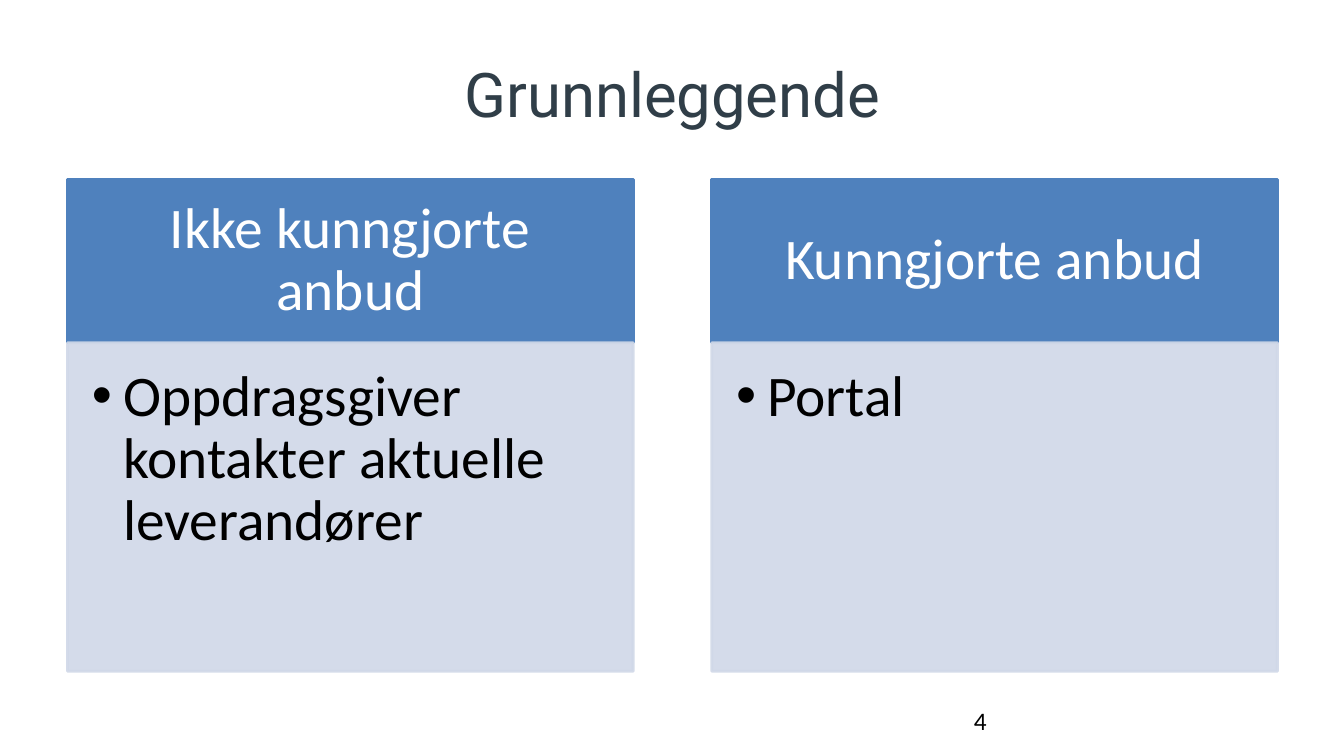
from dataclasses import dataclass

from lxml.etree import SubElement
from pptx import Presentation
from pptx.dml.color import RGBColor
from pptx.enum.shapes import MSO_SHAPE
from pptx.enum.text import MSO_ANCHOR, PP_ALIGN
from pptx.oxml.ns import qn
from pptx.util import Inches, Pt


@dataclass(frozen=True)
class Theme:
    title_color: RGBColor = RGBColor(0x30, 0x3E, 0x48)
    header: RGBColor = RGBColor(0x4F, 0x81, 0xBD)
    body: RGBColor = RGBColor(0xD0, 0xD8, 0xE8)
    white: RGBColor = RGBColor(0xFF, 0xFF, 0xFF)
    black: RGBColor = RGBColor(0, 0, 0)
    title_font: str = "Roboto"
    text_font: str = "Calibri"
    title_size: Pt = Pt(44)
    text_size: Pt = Pt(41)
    number_size: Pt = Pt(18)


T = Theme()


def add_run(p, text, font, size, color):
    r = p.add_run()
    r.text = text
    r.font.name, r.font.size = font, size
    r.font.color.rgb = color


def add_panel(slide, x, y, h, color, margins, anchor):
    sp = slide.shapes.add_shape(MSO_SHAPE.RECTANGLE, Inches(x), Inches(y), Inches(5.61), Inches(h))
    sp.shadow.inherit = False
    sp.fill.solid()
    sp.fill.fore_color.rgb = color
    sp.line.color.rgb = color
    sp.line.width = Pt(2)
    tf = sp.text_frame
    tf.word_wrap = True
    tf.vertical_anchor = anchor
    tf.margin_left, tf.margin_top, tf.margin_right, tf.margin_bottom = map(Inches, margins)
    tf.paragraphs[0].line_spacing = 0.9
    return sp


prs = Presentation()
prs.slide_width, prs.slide_height = Inches(13.33), Inches(7.5)
s = prs.slides.add_slide(prs.slide_layouts[5])

# Title
title = s.shapes.title
title.left, title.top, title.width, title.height = map(Inches, (0.67, 0.3, 12, 1.25))
title.text_frame.vertical_anchor = MSO_ANCHOR.MIDDLE
p = title.text_frame.paragraphs[0]
p.alignment = PP_ALIGN.CENTER
add_run(p, "Grunnleggende", T.title_font, T.title_size, T.title_color)

# Two columns: header above a bulleted body
columns = [
    ("Ikke kunngjorte anbud", "Oppdragsgiver kontakter aktuelle leverandører"),
    ("Kunngjorte anbud", "Portal"),
]
for i, (heading, bullet) in enumerate(columns):
    x = 0.67 + i * 6.39

    sp = add_panel(s, x, 1.78, 1.62, T.header, (0.32, 0.18, 0.32, 0.18), MSO_ANCHOR.MIDDLE)
    p = sp.text_frame.paragraphs[0]
    p.alignment = PP_ALIGN.CENTER
    add_run(p, heading, T.text_font, T.text_size, T.white)

    sp = add_panel(s, x, 3.4, 3.26, T.body, (0.24, 0.24, 0.32, 0.36), MSO_ANCHOR.TOP)
    # Fill and line are 90 % opaque
    for clr in sp.fill._xPr.iter(qn("a:srgbClr")):
        SubElement(clr, qn("a:alpha"), val="90000")
    p = sp.text_frame.paragraphs[0]
    p.alignment = PP_ALIGN.LEFT
    p.level = 1
    pPr = p._p.get_or_add_pPr()
    pPr.set("marL", str(Inches(0.31)))
    pPr.set("indent", str(-Inches(0.31)))
    SubElement(pPr, qn("a:buFont"), typeface="Arial")
    SubElement(pPr, qn("a:buChar"), char="•")
    add_run(p, bullet, T.text_font, T.text_size, T.black)

# Slide number
sp = s.shapes.add_textbox(Inches(9.56), Inches(6.95), Inches(3.11), Inches(0.4))
sp.text_frame.word_wrap = True
add_run(sp.text_frame.paragraphs[0], "4", T.text_font, T.number_size, T.black)

prs.save("out.pptx")
